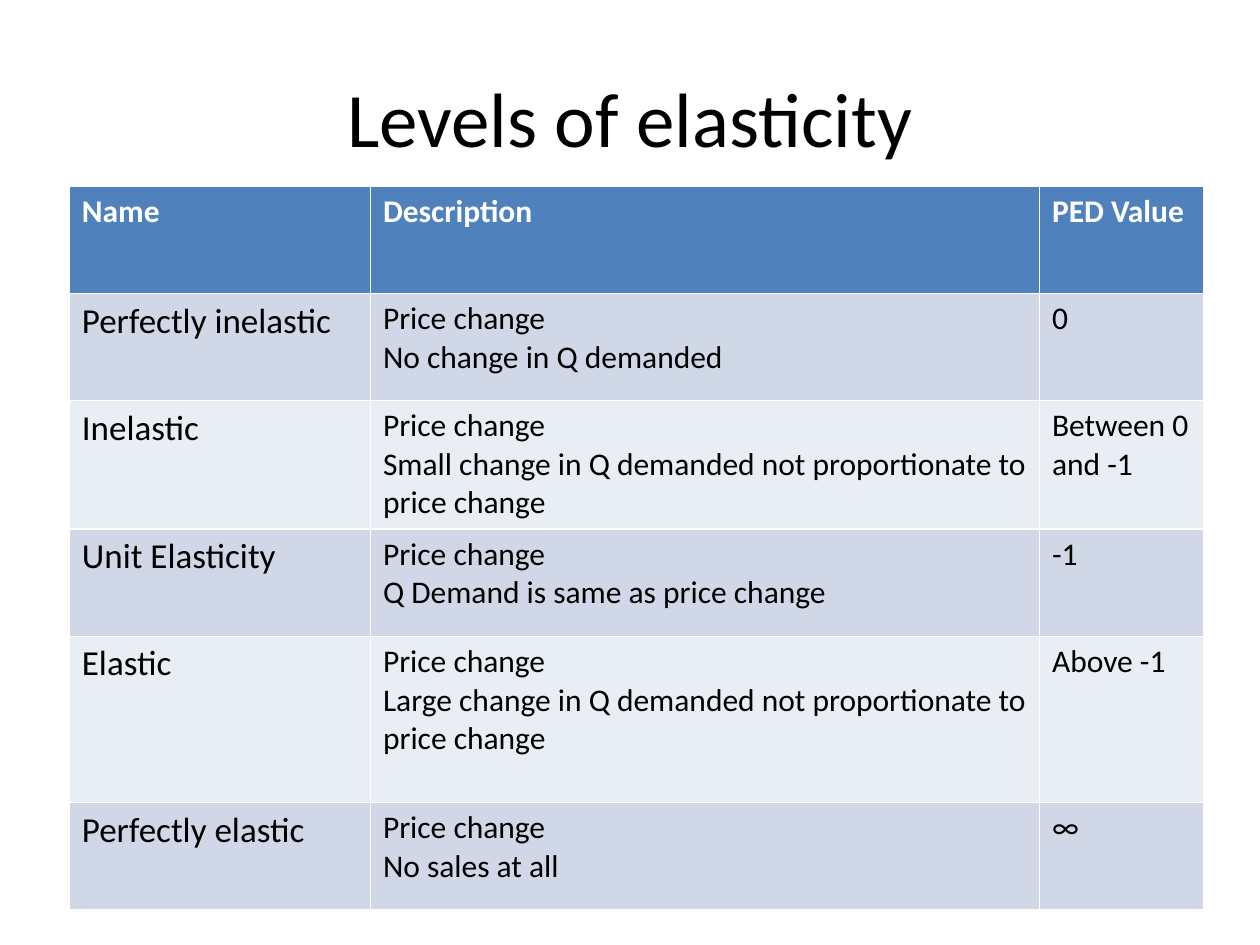
from pptx import Presentation
from pptx.dml.color import RGBColor
from pptx.enum.text import MSO_ANCHOR, PP_ALIGN
from pptx.util import Inches, Pt

COLORS = {
    "text": "000000",
    "header_text": "FFFFFF",
    "header": "4F81BD",
    "odd_row": "D0D8E8",
    "even_row": "E9EDF4",
}
HEADINGS = ["Name", "Description", "PED Value"]
LEVELS = [
    ("Perfectly inelastic", "Price change\nNo change in Q demanded", "0"),
    ("Inelastic",
     "Price change\nSmall change in Q demanded not proportionate to price change",
     "Between 0 and -1"),
    ("Unit Elasticity", "Price change\nQ Demand is same as price change", "-1"),
    ("Elastic",
     "Price change\nLarge change in Q demanded not proportionate to price change",
     "Above -1"),
    ("Perfectly elastic", "Price change\nNo sales at all", "∞"),
]
COLUMN_WIDTHS = [2.39, 5.31, 1.3]
ROW_HEIGHTS = [0.85, 0.85, 1.02, 0.85, 1.32, 0.85]


class SlideBuilder:
    def __init__(self, slide, font="Calibri"):
        self.slide = slide
        self.font = font

    def set_text(self, frame, text, size, color="text", bold=False, align=None):
        """Fill a text frame, one paragraph for each line of text."""
        frame.text = text
        for paragraph in frame.paragraphs:
            paragraph.alignment = align
            paragraph.font.name = self.font
            paragraph.font.size = Pt(size)
            paragraph.font.bold = bold
            paragraph.font.color.rgb = RGBColor.from_string(COLORS[color])

    def title(self, text, left, top, width, height):
        box = self.slide.shapes.add_textbox(
            Inches(left), Inches(top), Inches(width), Inches(height))
        frame = box.text_frame
        frame.word_wrap = True
        frame.vertical_anchor = MSO_ANCHOR.MIDDLE
        self.set_text(frame, text, 44, align=PP_ALIGN.CENTER)

    def table(self, rows, left, top, widths, heights):
        table = self.slide.shapes.add_table(
            len(rows), len(widths), Inches(left), Inches(top),
            Inches(sum(widths)), Inches(sum(heights))).table
        for column, width in zip(table.columns, widths):
            column.width = Inches(width)
        for row, height in zip(table.rows, heights):
            row.height = Inches(height)
        for r, texts in enumerate(rows):
            for c, text in enumerate(texts):
                self.cell(table.cell(r, c), text, r, c)

    def cell(self, cell, text, row, column):
        is_header = row == 0
        if is_header:
            fill = "header"
        else:
            fill = "odd_row" if row % 2 else "even_row"
        cell.fill.solid()
        cell.fill.fore_color.rgb = RGBColor.from_string(COLORS[fill])
        size = 20 if column == 0 and not is_header else 18
        color = "header_text" if is_header else "text"
        self.set_text(cell.text_frame, text, size, color, bold=is_header)


def main():
    deck = Presentation()
    deck.slide_width, deck.slide_height = Inches(10), Inches(7.5)
    builder = SlideBuilder(deck.slides.add_slide(deck.slide_layouts[6]))
    builder.title("Levels of elasticity", 0.5, 0.3, 9, 1.25)
    builder.table([HEADINGS, *LEVELS], 0.55, 1.48, COLUMN_WIDTHS, ROW_HEIGHTS)
    deck.save("out.pptx")


if __name__ == "__main__":
    main()
